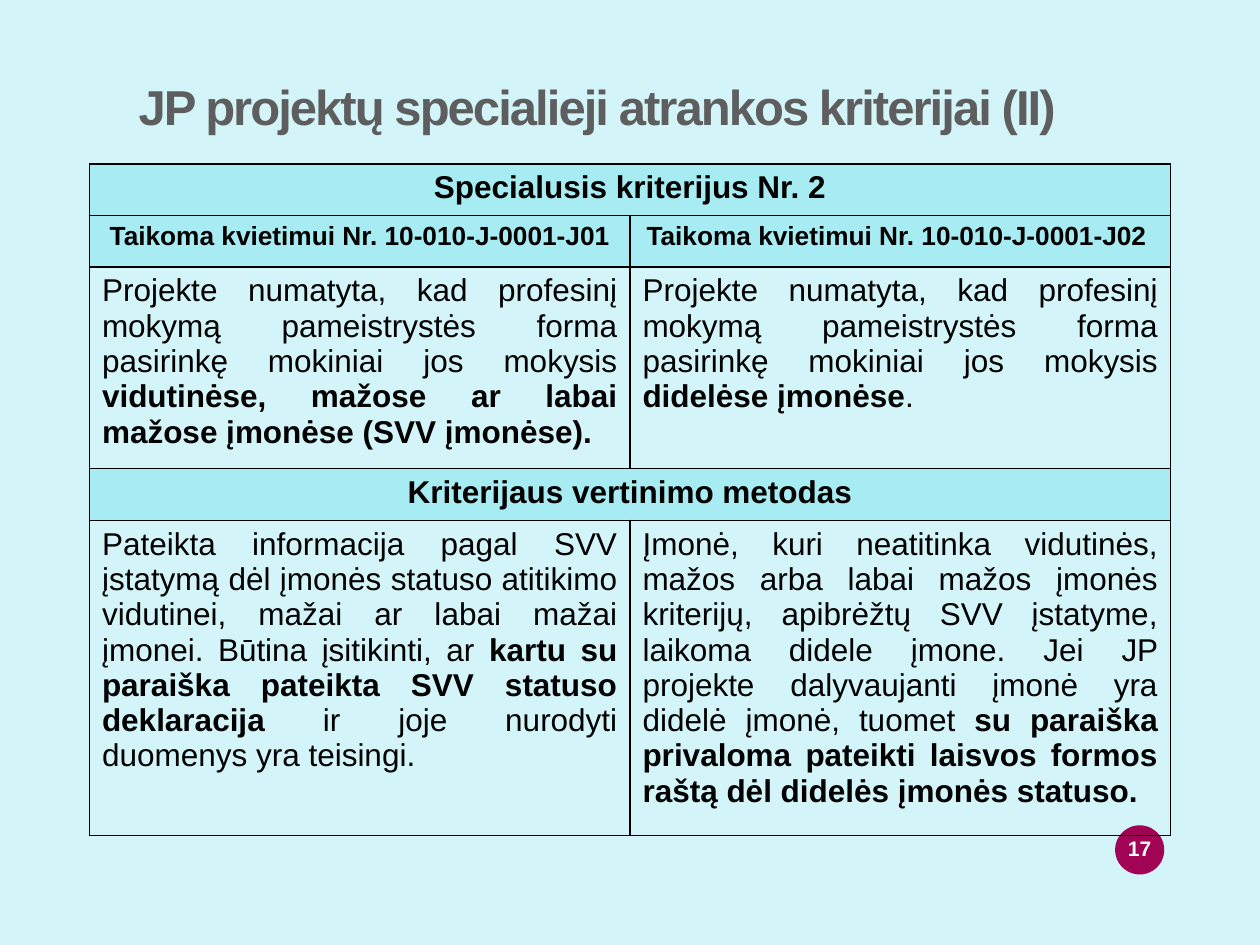
from dataclasses import dataclass

from lxml import etree
from pptx import Presentation
from pptx import util as u
from pptx.dml.color import RGBColor
from pptx.enum import shapes, text
from pptx.oxml.ns import qn


@dataclass(frozen=True)
class Theme:
    font: str = "Arial"
    background: str = "D3F5F9"
    heading_fill: str = "A6ECF2"
    badge: str = "A20455"
    title: str = "5E5E5E"
    ink: str = "000000"
    white: str = "FFFFFF"
    title_size: int = 28
    body_size: int = 18
    call_size: int = 15
    number_size: int = 12


THEME = Theme()
CENTER = text.PP_ALIGN.CENTER
JUSTIFY = text.PP_ALIGN.JUSTIFY

CRITERION = ("Projekte numatyta, kad profesinį mokymą pameistrystės forma "
             "pasirinkę mokiniai jos mokysis ")
ROWS = [
    (0.41, "heading", ["Specialusis kriterijus Nr. 2"]),
    (0.41, "call", ["Taikoma kvietimui Nr. 10-010-J-0001-J01",
                    "Taikoma kvietimui Nr. 10-010-J-0001-J02 "]),
    (1.5, "body", [
        [(CRITERION, False),
         ("vidutinėse, mažose ar labai mažose įmonėse (SVV įmonėse).", True)],
        [(CRITERION, False), ("didelėse įmonėse", True), (".", False)],
    ]),
    (0.41, "heading", ["Kriterijaus vertinimo metodas"]),
    (2.33, "body", [
        [("Pateikta informacija pagal SVV įstatymą dėl įmonės statuso atitikimo "
          "vidutinei, mažai ar labai mažai įmonei. Būtina įsitikinti, ar ", False),
         ("kartu su paraiška pateikta SVV statuso deklaracija ", True),
         ("ir joje nurodyti duomenys yra teisingi.", False)],
        [("Įmonė, kuri neatitinka vidutinės, mažos arba labai mažos įmonės "
          "kriterijų, apibrėžtų SVV įstatyme, laikoma didele įmone. Jei JP projekte "
          "dalyvaujanti įmonė yra didelė įmonė, tuomet ", False),
         ("su paraiška privaloma pateikti laisvos formos raštą dėl didelės "
          "įmonės statuso.", True)],
    ]),
]


def write_text(frame, content, size, color=THEME.ink, align=None, spacing=None):
    frame.word_wrap = True
    paragraph = frame.paragraphs[0]
    paragraph.alignment = align
    runs = [(content, True)] if isinstance(content, str) else content
    for words, bold in runs:
        run = paragraph.add_run()
        run.text = words
        run.font.name = THEME.font
        run.font.size = u.Pt(size)
        run.font.bold = bold
        run.font.color.rgb = RGBColor.from_string(color)
        if spacing is not None:
            run.font._element.set("spc", str(round(spacing * 100)))


def clear_margins(frame):
    frame.margin_left = frame.margin_right = 0
    frame.margin_top = frame.margin_bottom = 0


def add_borders(cell):
    properties = cell._tc.get_or_add_tcPr()
    for side in ("lnL", "lnR", "lnT", "lnB"):
        line = etree.SubElement(properties, qn(f"a:{side}"), w=str(u.Pt(1)))
        fill = etree.SubElement(line, qn("a:solidFill"))
        etree.SubElement(fill, qn("a:srgbClr"), val=THEME.ink)


def add_title(slide, left, top, width, height):
    box = slide.shapes.add_textbox(left, top, width, height)
    clear_margins(box.text_frame)
    write_text(box.text_frame, "JP projektų specialieji atrankos kriterijai (II)",
               THEME.title_size, color=THEME.title, spacing=-1.1)


def add_criteria_table(slide, left, top, width):
    height = u.Inches(sum(row[0] for row in ROWS))
    table = slide.shapes.add_table(len(ROWS), 2, left, top, width, height).table
    table.first_row = table.horz_banding = False
    for column in table.columns:
        column.width = width // 2
    for row, (row_height, kind, contents) in zip(table.rows, ROWS):
        row.height = u.Inches(row_height)
        cells = list(row.cells)
        for cell in cells:
            add_borders(cell)
            if kind == "body":
                cell.fill.background()
            else:
                cell.fill.solid()
                cell.fill.fore_color.rgb = RGBColor.from_string(THEME.heading_fill)
        if len(contents) == 1:
            cells[0].merge(cells[1])
        for cell, content in zip(cells, contents):
            write_text(cell.text_frame, content,
                       THEME.call_size if kind == "call" else THEME.body_size,
                       align=JUSTIFY if kind == "body" else CENTER)


def add_page_number(slide, left, top, diameter):
    badge = slide.shapes.add_shape(shapes.MSO_SHAPE.OVAL, left, top, diameter, diameter)
    badge.shadow.inherit = False
    badge.fill.solid()
    badge.fill.fore_color.rgb = RGBColor.from_string(THEME.badge)
    badge.line.fill.background()
    label = slide.shapes.add_textbox(left, top + u.Inches(0.08), diameter, u.Inches(0.2))
    clear_margins(label.text_frame)
    label.text_frame.vertical_anchor = text.MSO_ANCHOR.MIDDLE
    write_text(label.text_frame, "17", THEME.number_size, color=THEME.white, align=CENTER)


def main():
    presentation = Presentation()
    presentation.slide_width = u.Inches(10)
    presentation.slide_height = u.Inches(7.5)
    slide = presentation.slides.add_slide(presentation.slide_layouts[6])
    slide.background.fill.solid()
    slide.background.fill.fore_color.rgb = RGBColor.from_string(THEME.background)
    add_page_number(slide, u.Inches(8.85), u.Inches(6.55), u.Inches(0.39))
    add_title(slide, u.Inches(1.1), u.Inches(0.61), u.Inches(7.53), u.Inches(0.94))
    add_criteria_table(slide, u.Inches(0.71), u.Inches(1.3), u.Inches(8.58))
    presentation.save("out.pptx")


if __name__ == "__main__":
    main()
